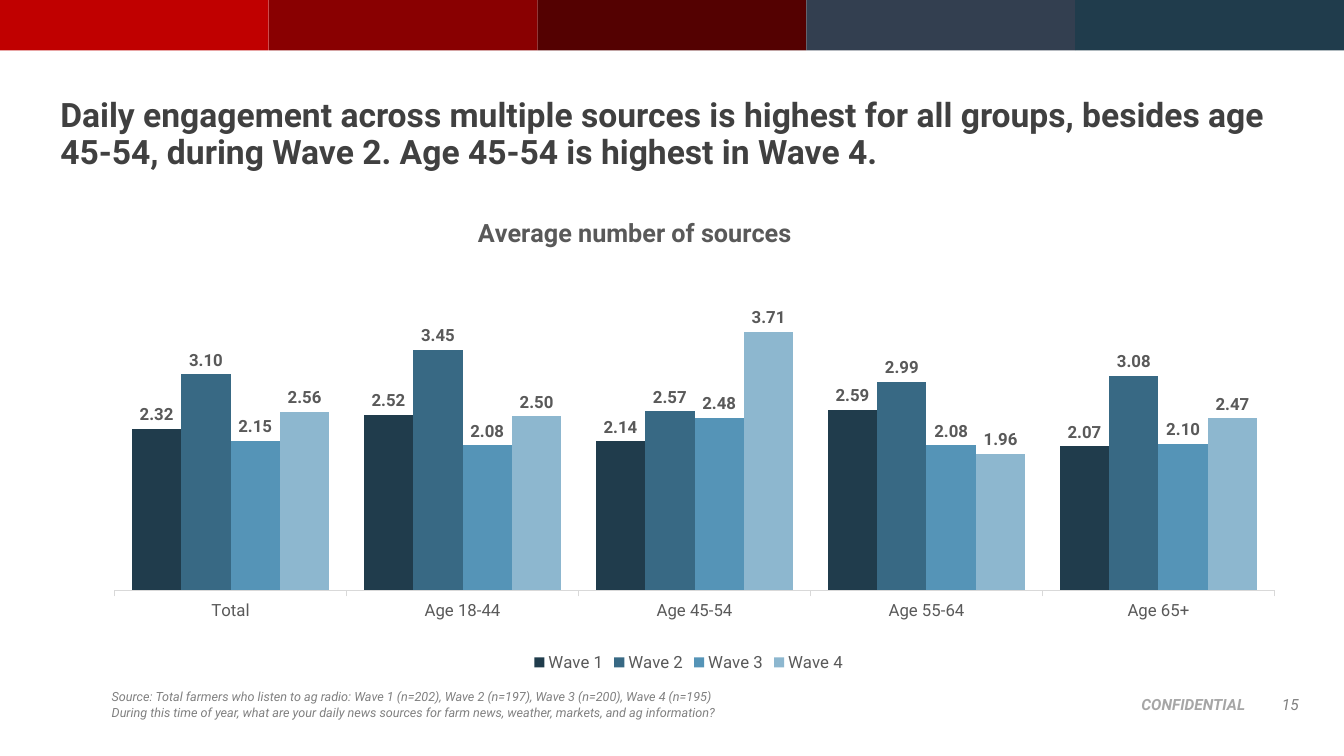
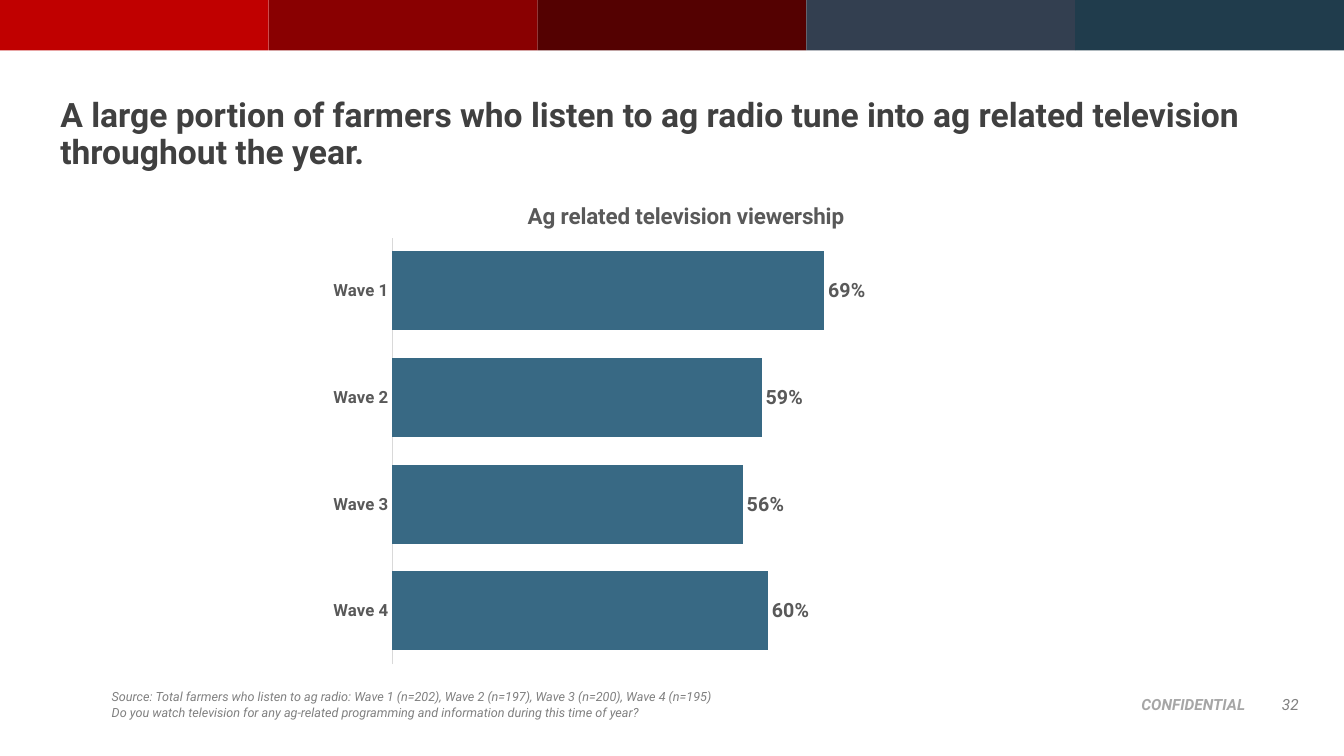
from dataclasses import dataclass

from lxml.etree import SubElement
from pptx import Presentation
from pptx.chart.chart import Chart
from pptx.chart.data import CategoryChartData
from pptx.dml.color import RGBColor
from pptx.enum.chart import (XL_CHART_TYPE as Kind, XL_LABEL_POSITION as Spot,
                             XL_LEGEND_POSITION as Side, XL_TICK_LABEL_POSITION as Place,
                             XL_TICK_MARK as Tick)
from pptx.enum.shapes import MSO_SHAPE as Form
from pptx.enum.text import MSO_ANCHOR as Anchor, PP_ALIGN as Align
from pptx.oxml.ns import qn
from pptx.oxml.xmlchemy import BaseOxmlElement as Element
from pptx.slide import Slide
from pptx.text.text import Font
from pptx.util import Inches, Pt

WIDTH, HEIGHT = 13.33, 7.5
FACE = "Roboto"
HEX = {
    "red": "C00000", "crimson": "890001", "maroon": "540101",
    "slate": "333F50", "navy": "203C4C",
    "steel": "386984", "sky": "5594B7", "pale": "8DB7CF",
    "title": "404040", "label": "595959", "note": "808080",
    "mark": "A6A6A6", "axis": "D9D9D9",
}
BANDS = ("red", "crimson", "maroon", "slate", "navy")
SOURCE = ("Source: Total farmers who listen to ag radio: "
          "Wave 1 (n=202), Wave 2 (n=197), Wave 3 (n=200), Wave 4 (n=195)")


@dataclass
class Box:
    left: float
    top: float
    width: float
    height: float

    def inches(self) -> list[Inches]:
        return [Inches(n) for n in (self.left, self.top, self.width, self.height)]


@dataclass
class Style:
    size: int
    color: str
    bold: bool = False
    italic: bool = False


@dataclass
class Series:
    name: str
    values: tuple[float, ...]
    color: str


@dataclass
class Graph:
    kind: Kind
    box: Box
    title: str
    title_size: int
    title_at: tuple[float, float]
    plot: tuple[float, float, float, float]
    cats: tuple[str, ...]
    series: tuple[Series, ...]
    top: float
    gap: int
    format: str
    label_size: int
    tick: Tick
    bold_cats: bool = False
    legend: bool = False


@dataclass
class Page:
    number: int
    title: str
    question: str
    graph: Graph


TITLE = Style(24, "title", bold=True)
NOTE = Style(9, "note", italic=True)
MARK = Style(11, "mark", bold=True, italic=True)
NUMBER = Style(11, "note", italic=True)

PAGES = (
    Page(
        15,
        "Daily engagement across multiple sources is highest for all groups, "
        "besides age 45-54, during Wave 2. Age 45-54 is highest in Wave 4.",
        "During this time of year, what are your daily news sources for "
        "farm news, weather, markets, and ag information?",
        Graph(
            Kind.COLUMN_CLUSTERED, Box(0.9, 1.7, 11.86, 5.01),
            "Average number of sources", 18, (0.32, 0.08), (0.02, 0.14, 0.97, 0.69),
            ("Total", "Age 18-44", "Age 45-54", "Age 55-64", "Age 65+"),
            (
                Series("Wave 1", (2.32, 2.52, 2.14, 2.59, 2.07), "navy"),
                Series("Wave 2", (3.10, 3.45, 2.57, 2.99, 3.08), "steel"),
                Series("Wave 3", (2.15, 2.08, 2.48, 2.08, 2.10), "sky"),
                Series("Wave 4", (2.56, 2.50, 3.71, 1.96, 2.47), "pale"),
            ),
            top=5, gap=70, format="0.00", label_size=12, tick=Tick.OUTSIDE, legend=True,
        ),
    ),
    Page(
        32,
        "A large portion of farmers who listen to ag radio tune into "
        "ag related television throughout the year.",
        "Do you watch television for any ag-related programming and "
        "information during this time of year?",
        Graph(
            Kind.BAR_CLUSTERED, Box(1.79, 1.81, 10.01, 4.98),
            "Ag related television viewership", 16, (0.34, 0.03), (0.21, 0.11, 0.62, 0.85),
            ("Wave 4", "Wave 3", "Wave 2", "Wave 1"),
            (Series("Series 1", (0.60, 0.56, 0.59, 0.69), "steel"),),
            top=1, gap=35, format="0%", label_size=14, tick=Tick.NONE, bold_cats=True,
        ),
    ),
)


def color(name: str) -> RGBColor:
    return RGBColor.from_string(HEX[name])


def set_font(font: Font, style: Style) -> None:
    font.name, font.size = FACE, Pt(style.size)
    font.bold, font.italic = style.bold, style.italic
    font.color.rgb = color(style.color)


def add_text(slide: Slide, box: Box, text: str, style: Style, align: Align = Align.LEFT,
             anchor: Anchor = Anchor.TOP, spacing: float = 1.0) -> None:
    frame = slide.shapes.add_textbox(*box.inches()).text_frame
    frame.word_wrap = True
    frame.vertical_anchor = anchor
    frame.text = text
    for para in frame.paragraphs:
        para.alignment, para.line_spacing = align, spacing
        for run in para.runs:
            set_font(run.font, style)


def add_bands(slide: Slide) -> None:
    step = WIDTH / len(BANDS)
    for i, name in enumerate(BANDS):
        band = slide.shapes.add_shape(Form.RECTANGLE, *Box(i * step, 0, step, 0.5).inches())
        band.shadow.inherit = False
        band.fill.solid()
        band.fill.fore_color.rgb = color(name)
        band.line.fill.background()


def place(part: Element, index: int, inner: bool, **sizes: float) -> None:
    """Fix a chart part at fractions of the chart's size; index is its layout's rank."""
    layout = part.find(qn("c:layout"))
    if layout is None:
        layout = SubElement(part, qn("c:layout"))
        part.insert(index, layout)
    manual = SubElement(layout, qn("c:manualLayout"))
    if inner:
        SubElement(manual, qn("c:layoutTarget")).set("val", "inner")
    for axis in "xy":
        SubElement(manual, qn(f"c:{axis}Mode")).set("val", "edge")
    for key, value in sizes.items():
        SubElement(manual, qn(f"c:{key}")).set("val", str(value))


def set_title(chart: Chart, graph: Graph) -> None:
    title = chart.chart_title
    title.text_frame.text = graph.title
    set_font(title.text_frame.paragraphs[0].runs[0].font,
             Style(graph.title_size, "label", bold=True))
    x, y = graph.title_at
    place(title._element, 1, False, x=x, y=y)


def set_axes(chart: Chart, graph: Graph) -> None:
    axis = chart.category_axis
    axis.major_tick_mark, axis.minor_tick_mark = graph.tick, Tick.NONE
    axis.tick_label_position = Place.NEXT_TO_AXIS
    axis.format.line.color.rgb = color("axis")
    axis.format.line.width = Pt(0.75)
    set_font(axis.tick_labels.font, Style(12, "label", bold=graph.bold_cats))
    scale = chart.value_axis
    scale.minimum_scale, scale.maximum_scale = 0, graph.top
    scale.has_major_gridlines = False
    scale.visible = False


def set_series(chart: Chart, graph: Graph) -> None:
    plot = chart.plots[0]
    plot.gap_width, plot.overlap = graph.gap, 0
    plot.vary_by_categories = False
    for series, item in zip(plot.series, graph.series):
        series.format.fill.solid()
        series.format.fill.fore_color.rgb = color(item.color)
        labels = series.data_labels
        labels.show_value = True
        labels.position = Spot.OUTSIDE_END
        labels.number_format, labels.number_format_is_linked = graph.format, False
        set_font(labels.font, Style(graph.label_size, "label", bold=True))


def add_graph(slide: Slide, graph: Graph) -> None:
    data = CategoryChartData(number_format=graph.format)
    data.categories = graph.cats
    for item in graph.series:
        data.add_series(item.name, item.values)
    chart = slide.shapes.add_chart(graph.kind, *graph.box.inches(), data).chart
    set_font(chart.font, Style(10, "label"))
    set_title(chart, graph)
    set_axes(chart, graph)
    set_series(chart, graph)
    area = chart._chartSpace.chart.plotArea
    place(area, 0, True, **dict(zip("xywh", graph.plot)))
    chart.has_legend = graph.legend
    if graph.legend:
        chart.legend.position = Side.BOTTOM
        chart.legend.include_in_layout = False
        set_font(chart.legend.font, Style(12, "label"))


def add_page(deck: Presentation, page: Page) -> None:
    slide = deck.slides.add_slide(deck.slide_layouts[6])
    add_bands(slide)
    add_text(slide, Box(0.5, 0.93, 12.33, 0.88), page.title, TITLE, spacing=0.9)
    add_graph(slide, page.graph)
    add_text(slide, Box(1.01, 6.79, 9.52, 0.4), f"{SOURCE}\n{page.question}", NOTE)
    add_text(slide, Box(10.98, 6.85, 1.47, 0.29), "CONFIDENTIAL", MARK, Align.RIGHT)
    add_text(slide, Box(12.42, 6.79, 0.56, 0.4), str(page.number), NUMBER,
             Align.RIGHT, Anchor.MIDDLE)


def main() -> None:
    deck = Presentation()
    deck.slide_width, deck.slide_height = Inches(WIDTH), Inches(HEIGHT)
    for page in PAGES:
        add_page(deck, page)
    deck.save("out.pptx")


if __name__ == "__main__":
    main()
